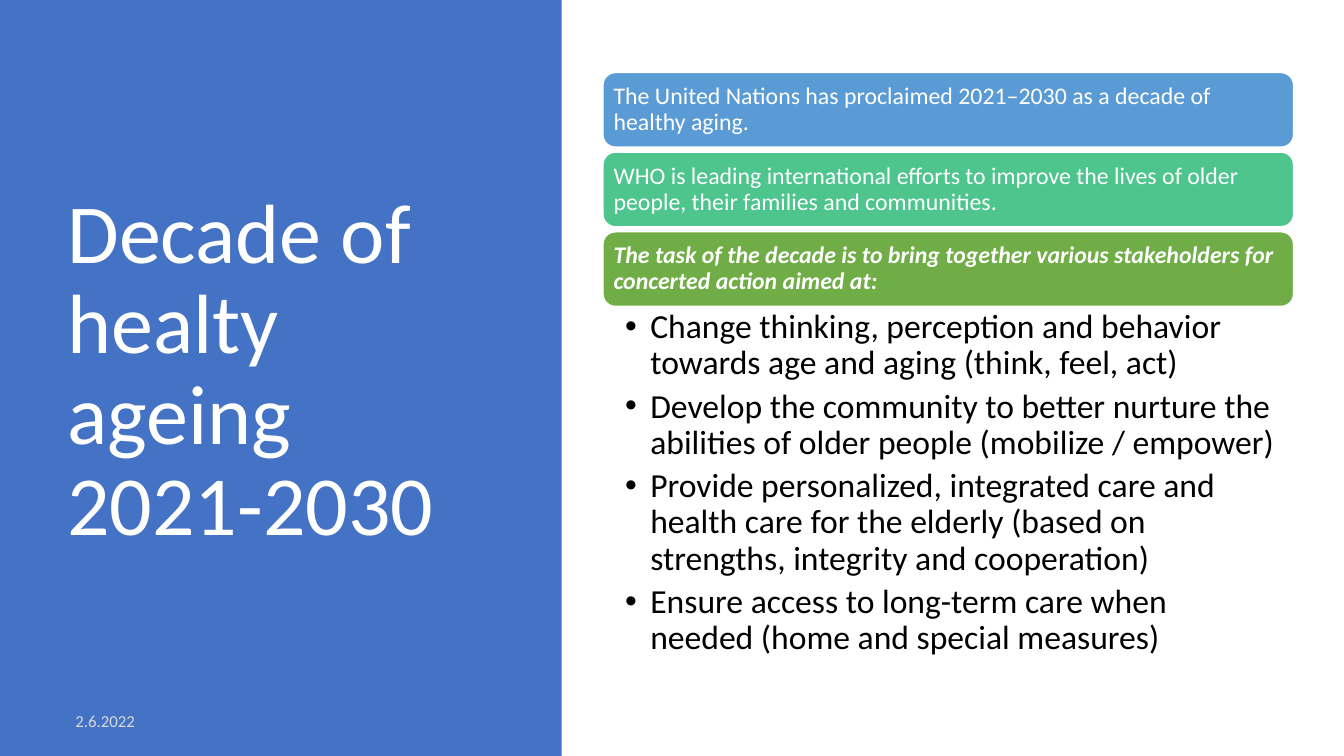
from lxml import etree
from pptx import Presentation
from pptx.dml.color import RGBColor
from pptx.enum.shapes import MSO_SHAPE as Shape
from pptx.enum.text import MSO_ANCHOR as Anchor, PP_ALIGN as Align
from pptx.oxml.ns import qn
from pptx.util import Inches, Pt

WHITE = "FFFFFF"


def color(code):
    return RGBColor.from_string(code)


def write(box, lines, size, ink=WHITE, bold=False, italic=False, spacing=0.9,
          after=0, anchor=Anchor.MIDDLE, insets=(0.1, 0.05, 0.1, 0.05), bullet=None):
    frame = box.text_frame
    frame.word_wrap = True
    frame.vertical_anchor = anchor
    (frame.margin_left, frame.margin_top,
     frame.margin_right, frame.margin_bottom) = map(Inches, insets)
    for number, line in enumerate(lines):
        para = frame.add_paragraph() if number else frame.paragraphs[0]
        para.alignment = Align.LEFT
        para.line_spacing = spacing
        para.space_after = Pt(after)
        span = para.add_run()
        span.text = line
        font = span.font
        font.name, font.size, font.bold, font.italic = "Calibri", Pt(size), bold, italic
        font.color.rgb = color(ink)
        if bullet:
            layout = para._p.get_or_add_pPr()
            layout.set("marL", str(Inches(0.25)))
            layout.set("indent", str(Inches(-0.25)))
            etree.SubElement(layout, qn("a:buFont")).set("typeface", "Arial")
            etree.SubElement(layout, qn("a:buChar")).set("char", bullet)


deck = Presentation()
deck.slide_width, deck.slide_height = Inches(13.33), Inches(7.5)
page = deck.slides.add_slide(deck.slide_layouts[6])
shapes = page.shapes

# Blue side panel with title and date
panel = shapes.add_shape(Shape.RECTANGLE, 0, 0, Inches(5.57), deck.slide_height)
panel.shadow.inherit = False
panel.fill.solid()
panel.fill.fore_color.rgb = color("4472C4")
panel.line.fill.background()

title = shapes.add_textbox(Inches(0.57), Inches(0.68), Inches(4.16), Inches(6.02))
write(title, ["Decade of healty ageing 2021-2030"], 60)
date = shapes.add_textbox(Inches(0.65), Inches(6.95), Inches(3), Inches(0.4))
write(date, ["2.6.2022"], 12, ink="D9D9D9", spacing=1, after=6)

# Column of message bars
LEFT, TOP, WIDTH = 5.98, 0.72, 6.85
BAR_HEIGHT, BAR_STEP = 0.74, 0.79
messages = [
    ("5B9BD5", False,
     "The United Nations has proclaimed 2021–2030 as a decade of healthy aging."),
    ("4DC58D", False,
     "WHO is leading international efforts to improve the lives of older people, "
     "their families and communities."),
    ("70AD47", True,
     "The task of the decade is to bring together various stakeholders for "
     "concerted action aimed at:"),
]
for row, (fill, strong, message) in enumerate(messages):
    bar = shapes.add_shape(Shape.ROUNDED_RECTANGLE, Inches(LEFT), Inches(TOP + row * BAR_STEP),
                           Inches(WIDTH), Inches(BAR_HEIGHT))
    bar.shadow.inherit = False
    bar.fill.solid()
    bar.fill.fore_color.rgb = color(fill)
    bar.line.color.rgb = color(WHITE)
    bar.line.width = Pt(1)
    write(bar, [message], 17, bold=strong, italic=strong, insets=(0.07,) * 4)

# Bulleted aims below the last bar
aims = shapes.add_textbox(Inches(LEFT), Inches(3.04), Inches(WIDTH), Inches(3.62))
write(aims, [
    "Change thinking, perception and behavior towards age and aging (think, feel, act)",
    "Develop the community to better nurture the abilities of older people (mobilize / empower)",
    "Provide personalized, integrated care and health care for the elderly "
    "(based on strengths, integrity and cooperation)",
    "Ensure access to long-term care when needed (home and special measures)",
], 24, ink="000000", after=5, anchor=Anchor.TOP, insets=(0.22, 0.03, 0.19, 0.03), bullet="•")

deck.save("out.pptx")
